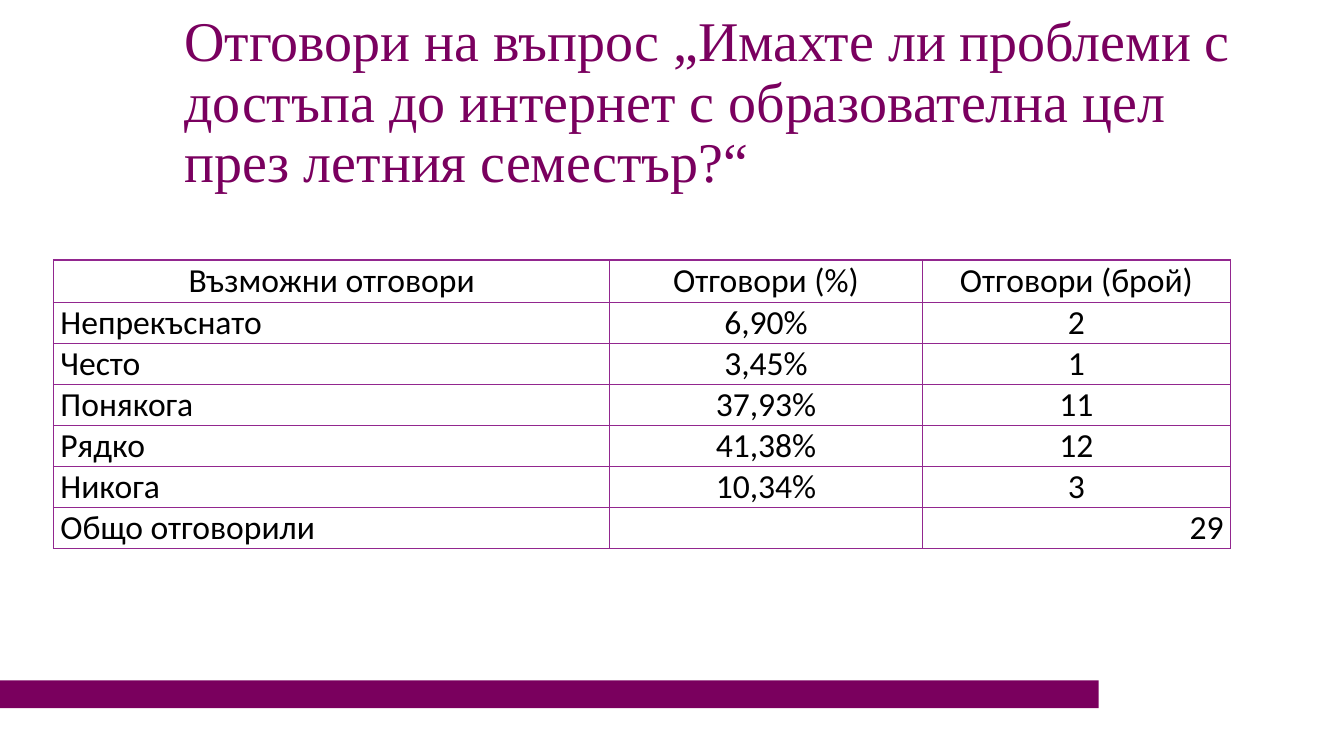
"""Build a slide with a survey question and a table of its answers."""
import dataclasses

import lxml.etree
import pptx
import pptx.dml.color
import pptx.enum.shapes
import pptx.enum.text
import pptx.oxml.ns
import pptx.util

COLS, ROWS = 160, 90
UNIT = pptx.util.Inches(1) / 12
ALIGN = pptx.enum.text.PP_ALIGN
ANCHOR = pptx.enum.text.MSO_ANCHOR
WIDTHS = (66.24, 37.2, 36.72)
HEAD, LINE = 5.04, 4.44


@dataclasses.dataclass
class Answer:
    """One answer with its share and count."""
    name: str
    share: str
    count: str
    aligns: tuple = (ALIGN.LEFT, ALIGN.CENTER, ALIGN.CENTER)


ANSWERS = (
    Answer("Възможни отговори", "Отговори (%)", "Отговори (брой)", (ALIGN.CENTER,) * 3),
    Answer("Непрекъснато", "6,90%", "2"),
    Answer("Често", "3,45%", "1"),
    Answer("Понякога", "37,93%", "11"),
    Answer("Рядко", "41,38%", "12"),
    Answer("Никога", "10,34%", "3"),
    Answer("Общо отговорили", "", "29", (ALIGN.LEFT, ALIGN.CENTER, ALIGN.RIGHT)),
)


def grid(*cells: float) -> list[int]:
    """Turn grid columns and rows into lengths."""
    return [round(cell * UNIT) for cell in cells]


def color(code: str) -> pptx.dml.color.RGBColor:
    """Turn a hex string into a colour."""
    return pptx.dml.color.RGBColor.from_string(code)


def write(frame, text: str, *, size: float, font: str, ink: str,
          align=ALIGN.LEFT, space: float = 1.0) -> None:
    """Write one formatted paragraph into a text frame."""
    para = frame.paragraphs[0]
    para.alignment, para.line_spacing = align, space
    if text:
        run = para.add_run()
        run.text = text
        run.font.size, run.font.name = pptx.util.Pt(size), font
        run.font.color.rgb = color(ink)


def border(cell, ink: str, width: float) -> None:
    """Draw a line on each side of a cell."""
    qn = pptx.oxml.ns.qn
    props = cell._tc.get_or_add_tcPr()
    for spot, side in enumerate(("a:lnL", "a:lnR", "a:lnT", "a:lnB")):
        line = lxml.etree.Element(qn(side), w=str(pptx.util.Pt(width)))
        fill = lxml.etree.SubElement(line, qn("a:solidFill"))
        lxml.etree.SubElement(fill, qn("a:srgbClr"), val=ink)
        props.insert(spot, line)


def add_bar(slide) -> None:
    """Draw the bar at the foot of the slide."""
    bar = slide.shapes.add_shape(
        pptx.enum.shapes.MSO_SHAPE.RECTANGLE, *grid(0, 81, 130.8, 3.3))
    bar.shadow.inherit = False
    bar.fill.solid()
    bar.fill.fore_color.rgb = color("7A005E")
    bar.line.fill.background()


def add_title(slide, text: str) -> None:
    """Place and fill the title."""
    title = slide.shapes.title
    title.left, title.top, title.width, title.height = grid(20.76, 3.72, 128.16, 17.4)
    frame = title.text_frame
    frame.word_wrap = True
    frame.auto_size = pptx.enum.text.MSO_AUTO_SIZE.NONE
    frame.vertical_anchor = ANCHOR.MIDDLE
    write(frame, text, size=40, font="Times New Roman", ink="7A005F", space=0.9)


def add_table(slide, answers: tuple[Answer, ...]) -> None:
    """Draw the table of answers."""
    high = HEAD + LINE * (len(answers) - 1)
    table = slide.shapes.add_table(
        len(answers), len(WIDTHS), *grid(6.36, 30.96, sum(WIDTHS), high)).table
    table.first_row = table.horz_banding = False
    for col, wide in zip(table.columns, grid(*WIDTHS)):
        col.width = wide
    for row, answer in enumerate(answers):
        table.rows[row].height = grid(LINE if row else HEAD)[0]
        texts = (answer.name, answer.share, answer.count)
        for col, (text, align) in enumerate(zip(texts, answer.aligns)):
            cell = table.cell(row, col)
            cell.margin_left = cell.margin_right = pptx.util.Inches(0.07)
            cell.margin_top = cell.margin_bottom = 0
            cell.vertical_anchor = ANCHOR.TOP if row else ANCHOR.MIDDLE
            cell.fill.background()
            border(cell, "92278F", 1)
            write(cell.text_frame, text, size=24, font="Calibri",
                  ink="000000", align=align)


def main() -> None:
    """Build and save the slide."""
    deck = pptx.Presentation()
    deck.slide_width, deck.slide_height = grid(COLS, ROWS)
    slide = deck.slides.add_slide(deck.slide_layouts[5])
    add_bar(slide)
    add_title(slide, "Отговори на въпрос „Имахте ли проблеми с достъпа до "
                     "интернет с образователна цел през летния семестър?“")
    add_table(slide, ANSWERS)
    deck.save("out.pptx")


if __name__ == "__main__":
    main()
